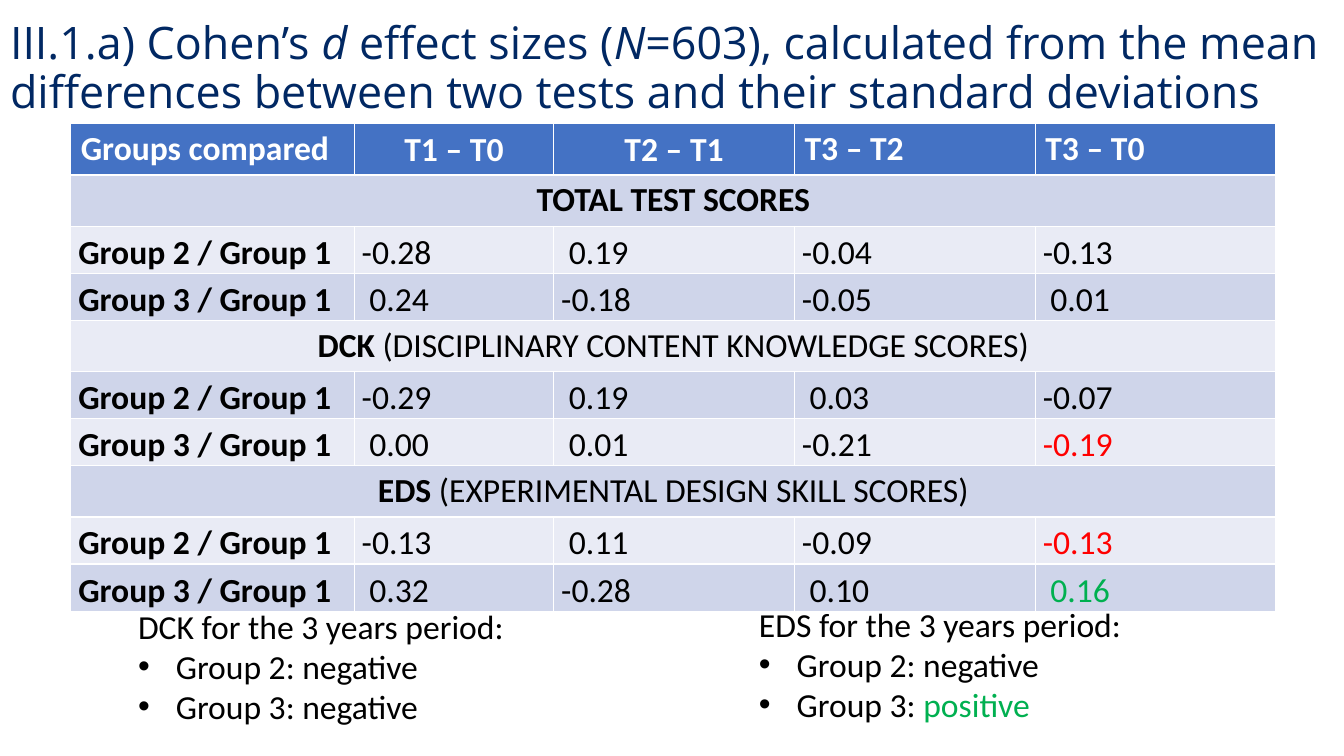
from dataclasses import dataclass

from lxml.etree import SubElement
from pptx import Presentation
from pptx.dml.color import RGBColor
from pptx.enum.text import MSO_ANCHOR, MSO_AUTO_SIZE, PP_ALIGN
from pptx.oxml.ns import qn
from pptx.util import Pt


@dataclass(frozen=True)
class Theme:
    title_font: str = "Open Sans"
    body_font: str = "Calibri"
    title_size: int = 32
    body_size: int = 24
    navy: str = "012863"
    black: str = "000000"
    white: str = "FFFFFF"
    red: str = "FF0000"
    green: str = "00B050"
    header_fill: str = "4472C4"
    dark_band: str = "CFD5EA"
    light_band: str = "E9EBF5"


theme = Theme()


def add_text(paragraph, text, color=theme.black, bold=False, italic=False,
             font_name=theme.body_font, size=theme.body_size):
    run = paragraph.add_run()
    run.text = text
    run.font.name = font_name
    run.font.size = Pt(size)
    run.font.bold = bold
    run.font.italic = italic
    run.font.color.rgb = RGBColor.from_string(color)


def prepare_cell(cell, fill, compact):
    """Fill the cell and return its paragraph; compact cells have tight margins."""
    cell.fill.solid()
    cell.fill.fore_color.rgb = RGBColor.from_string(fill)
    paragraph = cell.text_frame.paragraphs[0]
    if compact:
        cell.margin_left = cell.margin_right = Pt(5.4)
        cell.margin_top = cell.margin_bottom = Pt(0)
        paragraph.line_spacing = 1.15
        paragraph.space_after = Pt(10)
    return paragraph


presentation = Presentation()
presentation.slide_width = Pt(960)
presentation.slide_height = Pt(540)
slide = presentation.slides.add_slide(presentation.slide_layouts[5])

# Title
title = slide.shapes.title
title.left, title.top, title.width, title.height = Pt(0), Pt(0), Pt(973.5), Pt(99.5)
title.text_frame.word_wrap = True
title.text_frame.auto_size = MSO_AUTO_SIZE.NONE
title.text_frame.vertical_anchor = MSO_ANCHOR.MIDDLE
title_paragraph = title.text_frame.paragraphs[0]
title_paragraph.alignment = PP_ALIGN.LEFT
title_paragraph.line_spacing = 0.9
for text, italic in [
    ("III.1.a) Cohen’s ", False),
    ("d", True),
    (" effect sizes (", False),
    ("N", True),
    ("=603), calculated from the mean differences between two tests "
     "and their standard deviations", False),
]:
    add_text(title_paragraph, text, theme.navy, italic=italic,
             font_name=theme.title_font, size=theme.title_size)

# Effect size table: a section is a bold name, a plain remainder and its group rows
headers = ["Groups compared", "T1 – T0", "T2 – T1", "T3 – T2", "T3 – T0"]
sections = [
    ("TOTAL TEST SCORES", "", [
        ["Group 2 / Group 1", "-0.28", " 0.19", "-0.04", "-0.13"],
        ["Group 3 / Group 1", " 0.24", "-0.18", "-0.05", " 0.01"],
    ]),
    ("DCK ", "(DISCIPLINARY CONTENT KNOWLEDGE SCORES)", [
        ["Group 2 / Group 1", "-0.29", " 0.19", " 0.03", "-0.07"],
        ["Group 3 / Group 1", " 0.00", " 0.01", "-0.21", "-0.19"],
    ]),
    ("EDS ", "(EXPERIMENTAL DESIGN SKILL SCORES)", [
        ["Group 2 / Group 1", "-0.13", " 0.11", "-0.09", "-0.13"],
        ["Group 3 / Group 1", " 0.32", "-0.28", " 0.10", " 0.16"],
    ]),
]
highlights = {(6, 4): theme.red, (8, 4): theme.red, (9, 4): theme.green}
column_widths = [202.5, 142.5, 172, 172, 172]
row_count, row_height = 10, 29.5

table = slide.shapes.add_table(
    row_count, len(headers), Pt(50.5), Pt(88.5),
    Pt(sum(column_widths)), Pt(row_count * row_height)).table
for column, width in zip(table.columns, column_widths):
    column.width = Pt(width)

for column_index, header in enumerate(headers):
    centered = column_index in (1, 2)
    paragraph = prepare_cell(table.cell(0, column_index), theme.header_fill, centered)
    paragraph.alignment = PP_ALIGN.CENTER if centered else PP_ALIGN.LEFT
    add_text(paragraph, header, theme.white, bold=True)

bands = [theme.light_band, theme.dark_band]
row_index = 1
for name, remainder, group_rows in sections:
    heading = table.cell(row_index, 0)
    heading.merge(table.cell(row_index, len(headers) - 1))
    paragraph = prepare_cell(heading, bands[row_index % 2], False)
    paragraph.alignment = PP_ALIGN.CENTER
    add_text(paragraph, name, bold=True)
    if remainder:
        add_text(paragraph, remainder)
    for row_index, values in enumerate(group_rows, row_index + 1):
        for column_index, value in enumerate(values):
            cell = table.cell(row_index, column_index)
            paragraph = prepare_cell(cell, bands[row_index % 2], True)
            color = highlights.get((row_index, column_index), theme.black)
            add_text(paragraph, value, color, bold=column_index == 0)
    row_index += 1

# Conclusions below the table
conclusions = [
    (91.5, 429, 283.5, "DCK", "negative", theme.black),
    (535, 427.5, 281, "EDS", "positive", theme.green),
]
for left, top, width, score, group_3_trend, trend_color in conclusions:
    box = slide.shapes.add_textbox(Pt(left), Pt(top), Pt(width), Pt(94.5))
    frame = box.text_frame
    frame.word_wrap = False
    frame.auto_size = MSO_AUTO_SIZE.SHAPE_TO_FIT_TEXT
    add_text(frame.paragraphs[0], f"{score} for the 3 years period:")
    for group, trend, color in [
        ("Group 2: ", "negative", theme.black),
        ("Group 3: ", group_3_trend, trend_color),
    ]:
        paragraph = frame.add_paragraph()
        properties = paragraph._p.get_or_add_pPr()
        properties.set("marL", str(Pt(27)))
        properties.set("indent", str(-Pt(27)))
        SubElement(properties, qn("a:buFont"), typeface="Arial")
        SubElement(properties, qn("a:buChar"), char="•")
        add_text(paragraph, group)
        add_text(paragraph, trend, color)

presentation.save("out.pptx")
